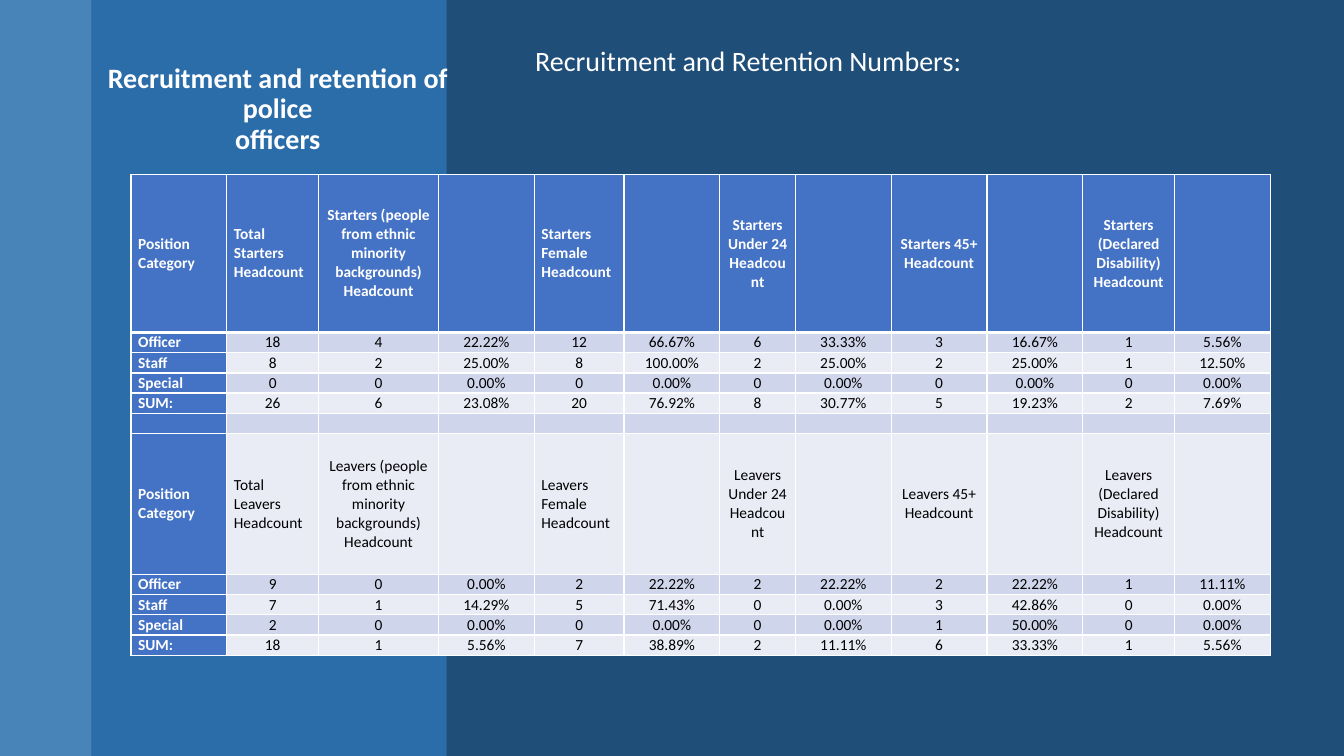
from dataclasses import dataclass

from lxml.etree import SubElement as Sub
from pptx import Presentation
from pptx.dml.color import RGBColor as RGB
from pptx.enum.shapes import MSO_SHAPE as Shape
from pptx.enum.text import MSO_ANCHOR as Anchor, PP_ALIGN as Align
from pptx.oxml.ns import qn
from pptx.util import Inches, Pt


@dataclass(frozen=True)
class Theme:
    font: str = "Calibri"
    head: int = 20
    cell: int = 11
    back: str = "1F4E79"
    edge: str = "5B9BD5"
    panel: str = "2E75B6"
    key: str = "4472C4"
    dark: str = "CFD5EA"
    light: str = "E9EBF5"
    white: str = "FFFFFF"
    black: str = "000000"


THEME = Theme()
WIDTHS = [0.95, 0.91, 1.19, 0.95, 0.89, 0.95, 0.75, 0.95, 0.95, 0.95, 0.91, 0.95]
GROUPS = ["(people from ethnic minority backgrounds)", "Female", "Under 24",
          "45+", "(Declared Disability)"]
# Headcounts: total, then one for each group
STARTS = {"Officer": [18, 4, 12, 6, 3, 1],
          "Staff": [8, 2, 8, 2, 2, 1],
          "Special": [0, 0, 0, 0, 0, 0]}
LEAVES = {"Officer": [9, 0, 2, 2, 2, 1],
          "Staff": [7, 1, 5, 0, 3, 0],
          "Special": [2, 0, 0, 0, 1, 0]}


def style(frame, size, color, bold=False, align=Align.LEFT, space=1.0):
    for para in frame.paragraphs:
        para.alignment = align
        para.line_spacing = space
        for run in para.runs:
            font = run.font
            font.name, font.size, font.bold = THEME.font, Pt(size), bold
            font.color.rgb = RGB.from_string(color)


def add_band(slide, left, width, color, alpha):
    band = slide.shapes.add_shape(Shape.RECTANGLE, Inches(left), 0,
                                  Inches(width), Inches(7.5))
    band.shadow.inherit = False
    band.line.fill.background()
    band.fill.solid()
    band.fill.fore_color.rgb = RGB.from_string(color)
    tint = band._element.spPr.find(qn("a:solidFill"))[0]
    Sub(tint, qn("a:alpha"), val=str(alpha * 1000))


def set_title(slide):
    title = slide.shapes.title
    title.left, title.top = Inches(0.95), Inches(0)
    title.width, title.height = Inches(3.61), Inches(2.48)
    frame = title.text_frame
    frame.text = "Recruitment and retention of police\vofficers"
    frame.word_wrap = True
    frame.vertical_anchor = Anchor.TOP
    frame.margin_top = Inches(0.64)
    style(frame, THEME.head, THEME.white, True, Align.CENTER, 0.9)
    # Bring the title in front of the bands
    node = title._element
    node.getparent().append(node)


def add_lead(slide):
    box = slide.shapes.add_textbox(Inches(5.21), Inches(0.42),
                                   Inches(7.6), Inches(6.27))
    frame = box.text_frame
    frame.word_wrap = True
    frame.text = "Recruitment and Retention Numbers:"
    style(frame, THEME.head, THEME.white, space=0.9)


def head_row(kind):
    row = ["Position Category", f"Total {kind} Headcount"]
    for group in GROUPS:
        row += [f"{kind} {group} Headcount", ""]
    return row


def data_row(name, counts):
    total = counts[0]
    row = [name, str(total)]
    for count in counts[1:]:
        share = count / total if total else 0
        row += [str(count), f"{share:.2%}"]
    return row


def block(kind, data):
    sums = [sum(col) for col in zip(*data.values())]
    rows = [data_row(name, counts) for name, counts in data.items()]
    return [head_row(kind), *rows, data_row("SUM:", sums)]


def set_edges(cell, top, low):
    props = cell._tc.get_or_add_tcPr()
    for tag, width in (("lnL", 1), ("lnR", 1), ("lnT", top), ("lnB", low)):
        line = Sub(props, qn(f"a:{tag}"), w=str(Pt(width)))
        fill = Sub(line, qn("a:solidFill"))
        Sub(fill, qn("a:srgbClr"), val=THEME.white)


def set_cell(cell, text, fill, color, bold, align):
    cell.margin_left = cell.margin_right = Inches(0.07)
    cell.margin_top = cell.margin_bottom = 0
    cell.vertical_anchor = Anchor.MIDDLE
    cell.fill.solid()
    cell.fill.fore_color.rgb = RGB.from_string(fill)
    if text:
        cell.text_frame.text = text
        style(cell.text_frame, THEME.cell, color, bold, align)
    else:
        # Keep empty rows as low as the others
        para = cell.text_frame.paragraphs[0]._p
        Sub(para, qn("a:endParaRPr"), sz=str(THEME.cell * 100))


def add_grid(slide):
    starts = block("Starters", STARTS)
    rows = [*starts, [""] * len(WIDTHS), *block("Leavers", LEAVES)]
    heads = {0: 1.57, len(starts) + 1: 1.4}
    grid = slide.shapes.add_table(len(rows), len(WIDTHS), Inches(1.3), Inches(1.73),
                                  Inches(11.32), Inches(4.76)).table
    grid.horz_banding = False
    for col, width in zip(grid.columns, WIDTHS):
        col.width = Inches(width)
    for r, row in enumerate(rows):
        grid.rows[r].height = Inches(heads.get(r, 0.2))
        for c, text in enumerate(row):
            key = r == 0 or c == 0
            fill = THEME.key if key else THEME.dark if r % 2 else THEME.light
            color = THEME.white if key else THEME.black
            left = c == 0 or (r in heads and c in (1, 4))
            cell = grid.cell(r, c)
            set_edges(cell, 3 if r == 1 else 1, 3 if r == 0 else 1)
            set_cell(cell, text, fill, color, key,
                     Align.LEFT if left else Align.CENTER)


def main():
    deck = Presentation()
    deck.slide_width, deck.slide_height = Inches(13.33), Inches(7.5)
    slide = deck.slides.add_slide(deck.slide_layouts[5])
    # Background and side bands
    slide.background.fill.solid()
    slide.background.fill.fore_color.rgb = RGB.from_string(THEME.back)
    add_band(slide, 0, 0.91, THEME.edge, 70)
    add_band(slide, 0.91, 3.52, THEME.panel, 80)
    # Headings and table
    set_title(slide)
    add_lead(slide)
    add_grid(slide)
    deck.save("out.pptx")


if __name__ == "__main__":
    main()
